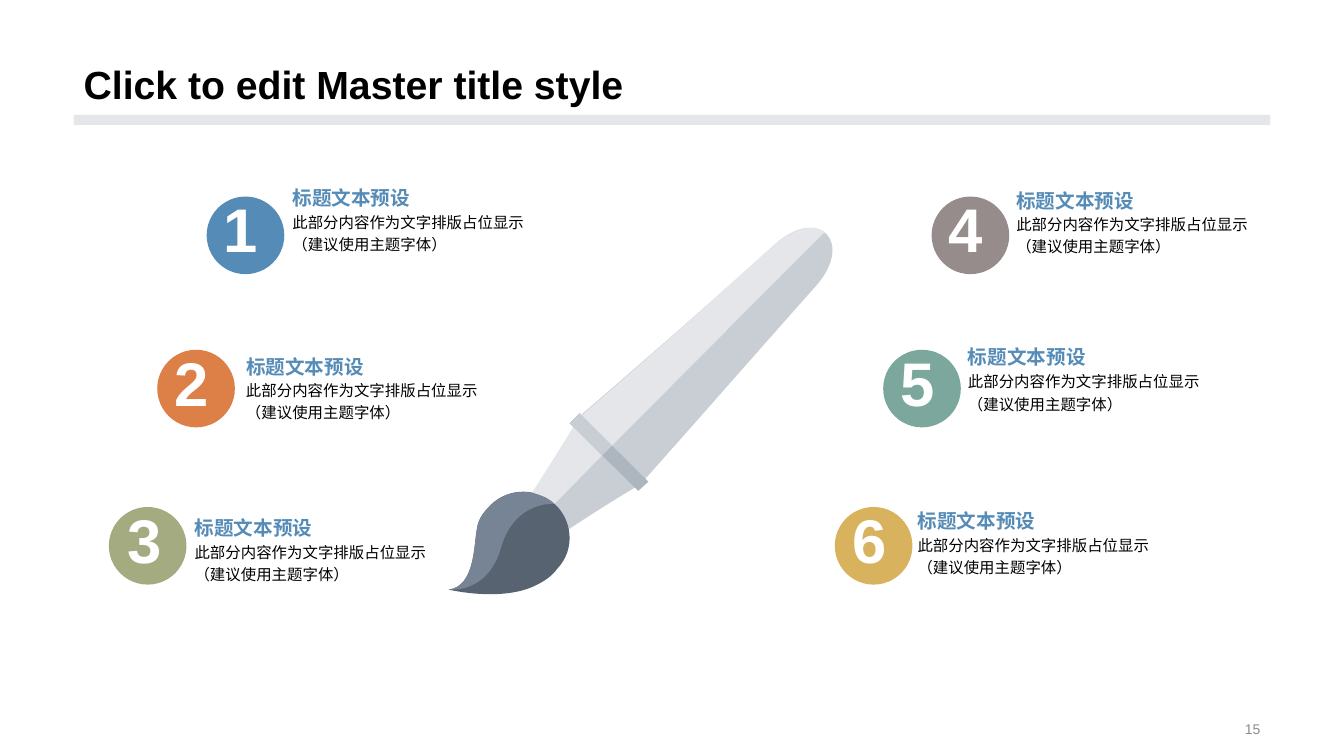
from copy import deepcopy
from dataclasses import dataclass

from lxml import etree
from pptx import Presentation
from pptx.dml.color import RGBColor
from pptx.enum.shapes import MSO_SHAPE
from pptx.enum.text import MSO_ANCHOR, MSO_AUTO_SIZE, PP_ALIGN
from pptx.oxml.ns import qn
from pptx.util import Inches, Pt

RECTANGLE = MSO_SHAPE.RECTANGLE
CIRCLE = MSO_SHAPE.FLOWCHART_CONNECTOR
TOP, MIDDLE, BOTTOM = MSO_ANCHOR.TOP, MSO_ANCHOR.MIDDLE, MSO_ANCHOR.BOTTOM
LEFT, RIGHT = PP_ALIGN.LEFT, PP_ALIGN.RIGHT
NO_AUTOFIT = MSO_AUTO_SIZE.NONE


@dataclass(frozen=True)
class Theme:
    font: str = "Arial"
    title_size: int = 28
    number_size: int = 44
    heading_size: int = 14
    body_size: int = 11
    page_size: int = 10
    black: str = "000000"
    white: str = "FFFFFF"
    grey: str = "8C8C8C"
    heading: str = "548BB7"
    light: str = "E4E6EA"
    shade: str = "C9CED5"
    ring: str = "ADB5BF"
    bristle: str = "778495"
    bristle_shade: str = "586371"
    badges: tuple = ("548BB7", "DD8047", "A5AB81", "968C8C", "7BA79D", "D8B25C")


THEME = Theme()
HEADING = "标题文本预设"
BODY = "此部分内容作为文字排版占位显示\n（建议使用主题字体）"
BADGE_SIZE = 0.77
ROW_TOPS = (1.95, 3.47, 5.03)
BADGE_LEFTS = (2.05, 1.56, 1.08, 9.24, 8.76, 8.28)
NUMBER_LEFTS = (2.12, 1.63, 1.17, 9.31, 8.83, 8.36)
CAPTIONS = (
    (2.9, 1.84, 2.08, 2.73), (2.44, 3.51, 3.74, 2.73), (1.93, 5.11, 5.35, 2.73),
    (10.08, 1.87, 2.1, 2.47), (9.6, 3.42, 3.66, 2.95), (9.1, 5.04, 5.28, 3.45),
)

BRUSH = (
    (THEME.shade, (5.55, 5.31), (
        (5.36, 5.43, 5.1, 5.16, 5.22, 4.98), (5.43, 4.66, 5.56, 4.45, 5.76, 4.12),
        (6, 4.31, 6.22, 4.53, 6.41, 4.77), (6.07, 4.97, 5.87, 5.1, 5.55, 5.31))),
    (THEME.shade, (8.09, 2.84), (
        (8.48, 2.4, 8.12, 2.04, 7.69, 2.42), (6.96, 3.08, 6.5, 3.48, 5.77, 4.11),
        (5.98, 4.32, 6.19, 4.54, 6.4, 4.75), (7.05, 4.02, 7.45, 3.56, 8.09, 2.84))),
    (THEME.ring, (6.43, 4.78), (
        (5.75, 4.1), (5.65, 4.2), (6.33, 4.87), (6.43, 4.78))),
    (THEME.bristle_shade, (4.73, 5.25), (
        (4.7, 5.41, 4.71, 5.82, 4.45, 5.85), (4.45, 5.85, 4.99, 5.98, 5.33, 5.8),
        (5.41, 5.76, 5.48, 5.71, 5.53, 5.64), (5.71, 5.45, 5.68, 5.15, 5.49, 4.99),
        (5.29, 4.82, 5, 4.85, 4.84, 5.04), (4.78, 5.1, 4.74, 5.17, 4.73, 5.25))),
    (THEME.light, (5.5, 5), (
        (5.97, 4.52, 5.97, 4.52, 5.97, 4.52), (5.69, 4.24, 5.69, 4.24, 5.69, 4.24),
        (5.54, 4.47, 5.43, 4.65, 5.28, 4.89), (5.35, 4.91, 5.42, 4.93, 5.49, 4.99),
        (5.49, 4.99, 5.49, 5, 5.5, 5))),
    (THEME.light, (6.07, 4.42), (
        (8.18, 2.3, 8.18, 2.3, 8.18, 2.3), (8.08, 2.23, 7.89, 2.25, 7.69, 2.42),
        (6.96, 3.08, 6.51, 3.48, 5.77, 4.12), (6.07, 4.42))),
    (THEME.shade, (6.07, 4.42), (
        (5.77, 4.12), (5.75, 4.1), (5.65, 4.2), (5.69, 4.24), (5.97, 4.52), (6.07, 4.42))),
    (THEME.bristle, (4.97, 5.43), (
        (5.11, 4.96, 5.5, 5, 5.5, 5), (5.49, 5, 5.49, 4.99, 5.49, 4.99),
        (5.42, 4.93, 5.35, 4.91, 5.28, 4.89), (5.12, 4.86, 4.95, 4.91, 4.84, 5.04),
        (4.78, 5.1, 4.74, 5.17, 4.73, 5.25), (4.7, 5.41, 4.71, 5.82, 4.45, 5.85),
        (4.45, 5.85, 4.84, 5.9, 4.97, 5.43))),
)


def write(box, text, *, size, color, bold=False, align=LEFT, anchor=TOP,
          wrap=True, inset=None, spacing=None):
    frame = box.text_frame
    frame.auto_size = NO_AUTOFIT
    frame.word_wrap = wrap
    frame.vertical_anchor = anchor
    if inset is not None:
        frame.margin_left = frame.margin_right = Inches(inset)
        frame.margin_top = frame.margin_bottom = Inches(inset)
    para = frame.paragraphs[0]
    para.text = text
    para.alignment = align
    if spacing:
        para.line_spacing = spacing
    for span in para.runs:
        span.font.name = THEME.font
        span.font.size = Pt(size)
        span.font.bold = bold
        span.font.color.rgb = RGBColor.from_string(color)
    for line_break in para._p.findall(qn("a:br")):
        line_break.append(deepcopy(para.runs[0].font._element))


def add_text(page, text, left, top, width, height, **text_format):
    box = page.shapes.add_textbox(*map(Inches, (left, top, width, height)))
    write(box, text, **text_format)


def paint(shape, color):
    shape.shadow.inherit = False
    shape.fill.solid()
    shape.fill.fore_color.rgb = RGBColor.from_string(color)
    shape.line.fill.background()


def add_solid(page, kind, left, top, width, height, color):
    paint(page.shapes.add_shape(kind, *map(Inches, (left, top, width, height))), color)


def bend_lines(shape, segments):
    lines = iter(list(shape._element.iter(qn("a:lnTo"))))
    for segment in segments:
        line = next(lines)
        if len(segment) == 6:
            curve = etree.Element(qn("a:cubicBezTo"))
            line.addprevious(curve)
            for part in (line, next(lines), next(lines)):
                curve.append(part[0])
                part.getparent().remove(part)


def add_outline(page, color, start, segments):
    points = [tuple(map(Inches, segment[place:place + 2]))
              for segment in segments for place in range(0, len(segment), 2)]
    builder = page.shapes.build_freeform(*map(Inches, start))
    builder.add_line_segments(points, close=True)
    shape = builder.convert_to_shape()
    bend_lines(shape, segments)
    paint(shape, color)


def add_title(page, text):
    title = page.shapes.title
    title.left, title.top, title.width, title.height = map(Inches, (0.73, 0, 11.87, 1.12))
    write(title, text, size=THEME.title_size, color=THEME.black, bold=True,
          anchor=BOTTOM, spacing=0.9)


def add_badge(page, number, left, top, number_left, color):
    add_solid(page, CIRCLE, left, top, BADGE_SIZE, BADGE_SIZE, color)
    add_text(page, str(number), number_left, top - 0.1, 0.55, 0.84,
             size=THEME.number_size, color=THEME.white, bold=True, wrap=False)


def add_caption(page, left, heading_top, body_top, width):
    add_text(page, HEADING, left, heading_top, 1.18, 0.24, size=THEME.heading_size,
             color=THEME.heading, bold=True, anchor=BOTTOM, wrap=False, inset=0)
    add_text(page, BODY, left, body_top, width, 0.84, size=THEME.body_size,
             color=THEME.black, inset=0, spacing=1.2)


def main():
    deck = Presentation()
    deck.slide_width, deck.slide_height = Inches(13.33), Inches(7.5)
    page = deck.slides.add_slide(deck.slide_layouts[5])
    add_solid(page, RECTANGLE, 0.73, 1.14, 11.87, 0.1, THEME.light)
    add_title(page, "Click to edit Master title style")
    add_text(page, "15", 9.42, 7.12, 3.18, 0.23, size=THEME.page_size,
             color=THEME.grey, align=RIGHT, anchor=MIDDLE)
    for color, start, segments in BRUSH:
        add_outline(page, color, start, segments)
    badges = zip(BADGE_LEFTS, ROW_TOPS * 2, NUMBER_LEFTS, THEME.badges)
    for number, badge in enumerate(badges, start=1):
        add_badge(page, number, *badge)
    for caption in CAPTIONS:
        add_caption(page, *caption)
    deck.save("out.pptx")


if __name__ == "__main__":
    main()
